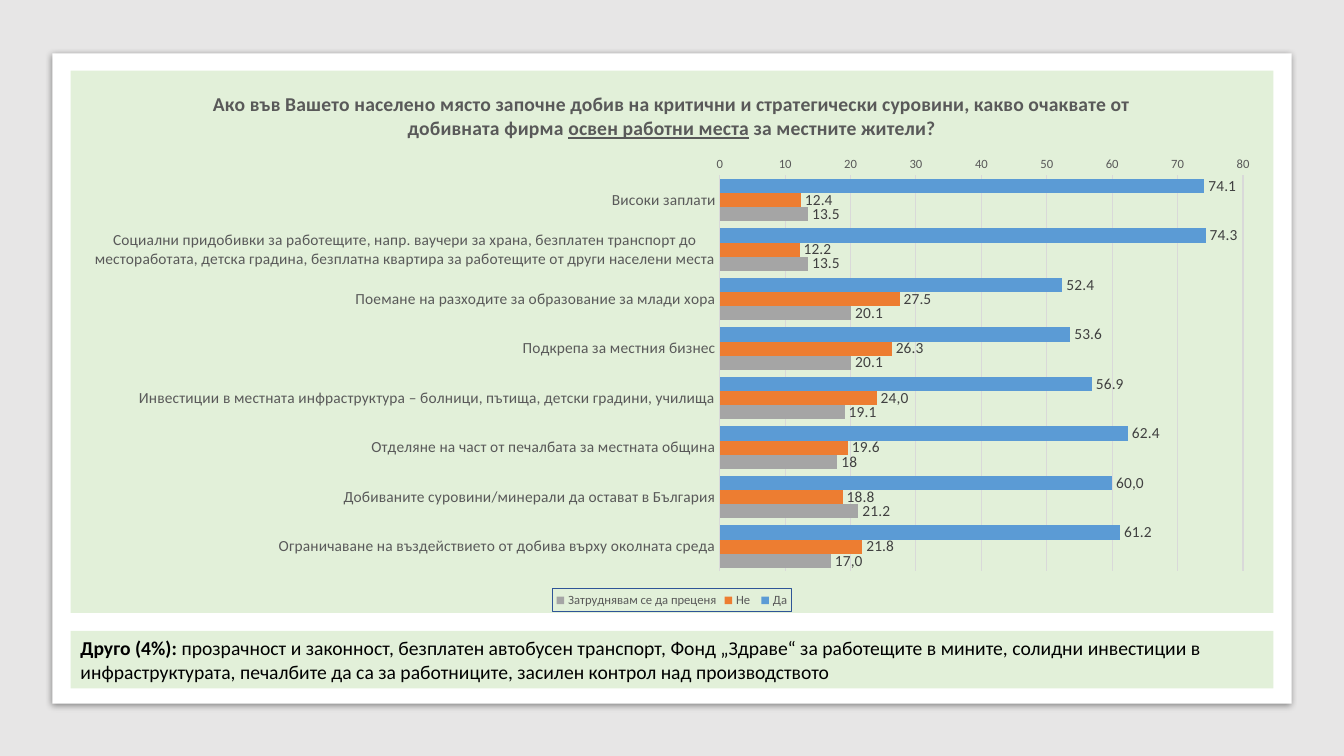
"""Build the survey slide on expectations from the mining company."""
from dataclasses import dataclass, field

from pptx import Presentation
from pptx.chart.chart import Chart
from pptx.chart.data import CategoryChartData
from pptx.dml.color import RGBColor
from pptx.enum.chart import XL_CHART_TYPE as ChartType, XL_LABEL_POSITION as LabelPosition
from pptx.enum.chart import XL_LEGEND_POSITION as LegendPosition, XL_TICK_MARK as TickMark
from pptx.enum.shapes import MSO_SHAPE as ShapeKind
from pptx.enum.text import MSO_ANCHOR as Anchor, PP_ALIGN as Align
from pptx.oxml import parse_xml
from pptx.oxml.ns import nsdecls, qn
from pptx.util import Inches, Pt

COLORS = {
    "backdrop": "E7E6E6", "panel": "FFFFFF", "green": "E2F0D9", "text": "000000",
    "muted": "595959", "label": "404040", "grid": "D9D9D9", "legend_border": "2F5597",
    "yes": "5B9BD5", "no": "ED7D31", "unsure": "A5A5A5",
}
FONT = "Calibri"
CATEGORIES = [
    "Високи заплати",
    "Социални придобивки за работещите, напр. ваучери за храна, безплатен транспорт до "
    "местоработата, детска градина, безплатна квартира за работещите от други населени места",
    "Поемане на разходите за образование за млади хора",
    "Подкрепа за местния бизнес",
    "Инвестиции в местната инфраструктура – болници, пътища, детски градини, училища",
    "Отделяне на част от печалбата за местната община",
    "Добиваните суровини/минерали да остават в България",
    "Ограничаване на въздействието от добива върху околната среда",
]


@dataclass
class Panel:
    """A filled rectangle, measured in inches."""
    left: float
    top: float
    width: float
    height: float
    color: str


@dataclass
class Answer:
    """One answer series and its specially worded labels."""
    name: str
    color: str
    values: list[float]
    labels: dict[int, str] = field(default_factory=dict)


@dataclass
class Piece:
    """A stretch of text with its own emphasis."""
    text: str
    bold: bool = False
    underline: bool = False


BACKDROP = Panel(0, 0, 13.33, 7.5, "backdrop")
CARD = Panel(0.52, 0.53, 12.29, 6.45, "panel")
CHART_AREA = Panel(0.7, 0.7, 11.93, 5.38, "green")
NOTE = Panel(0.7, 6.26, 11.93, 0.57, "green")
ANSWERS = [
    Answer("Да", "yes", [74.1, 74.3, 52.4, 53.6, 56.9, 62.4, 60, 61.2], {6: "60,0"}),
    Answer("Не ", "no", [12.4, 12.2, 27.5, 26.3, 24, 19.6, 18.8, 21.8], {4: "24,0"}),
    Answer("Затруднявам се да преценя", "unsure",
           [13.5, 13.5, 20.1, 20.1, 19.1, 18, 21.2, 17], {7: "17,0"}),
]
TITLE = [
    Piece("Ако във Вашето населено място започне добив на критични и стратегически суровини, "
          "какво очаквате от добивната фирма ", bold=True),
    Piece("освен работни места", bold=True, underline=True),
    Piece(" за местните жители?", bold=True),
]
NOTE_TEXT = [
    Piece("Друго (4%): ", bold=True),
    Piece("прозрачност и законност, безплатен автобусен транспорт, Фонд „Здраве“ за работещите "
          "в мините, солидни инвестиции в инфраструктурата, печалбите да са за работниците, "
          "засилен контрол над производството"),
]


def rgb(name: str) -> RGBColor:
    """Look up a palette colour."""
    return RGBColor.from_string(COLORS[name])


def style_font(font, size: float, color: str, bold: bool = False) -> None:
    """Apply the slide font with a size and colour."""
    font.name, font.size, font.bold = FONT, Pt(size), bold
    font.color.rgb = rgb(color)


def write_pieces(paragraph, pieces: list[Piece], color: str) -> None:
    """Write emphasised pieces into one paragraph."""
    for piece in pieces:
        run = paragraph.add_run()
        run.text = piece.text
        style_font(run.font, 14, color, piece.bold)
        if piece.underline:
            run.font.underline = True


def draw_panel(slide, panel: Panel):
    """Draw a borderless rectangle."""
    shape = slide.shapes.add_shape(
        ShapeKind.RECTANGLE, Inches(panel.left), Inches(panel.top),
        Inches(panel.width), Inches(panel.height))
    shape.shadow.inherit = False
    shape.fill.solid()
    shape.fill.fore_color.rgb = rgb(panel.color)
    shape.line.fill.background()
    return shape


def cast_shadow(shape) -> None:
    """Give a shape a soft shadow below."""
    effects = shape._element.spPr.find(qn("a:effectLst"))
    effects.append(parse_xml(
        f'<a:outerShdw {nsdecls("a")} blurRad="{Pt(5)}" dist="{Pt(1.4)}" dir="5400000" '
        'algn="t" rotWithShape="0"><a:srgbClr val="000000"><a:alpha val="43000"/>'
        '</a:srgbClr></a:outerShdw>'))


def place(element, index: int, **position: float) -> None:
    """Place a chart part, measured in inches from the chart's corner."""
    for old in element.findall(qn("c:layout")):
        element.remove(old)
    extent = {"x": CHART_AREA.width, "w": CHART_AREA.width,
              "y": CHART_AREA.height, "h": CHART_AREA.height}
    target = '<c:layoutTarget val="inner"/>' if "w" in position else ""
    modes = "".join(f'<c:{key}Mode val="edge"/>' for key in ("x", "y"))
    sizes = "".join(f'<c:{key} val="{value / extent[key]:.4f}"/>'
                    for key, value in position.items())
    element.insert(index, parse_xml(
        f'<c:layout {nsdecls("c")}><c:manualLayout>{target}{modes}{sizes}'
        '</c:manualLayout></c:layout>'))


def shape_properties(content: str):
    """Make chart shape properties."""
    return parse_xml(f'<c:spPr {nsdecls("c", "a")}>{content}</c:spPr>')


def solid(name: str) -> str:
    """Make a solid fill."""
    return f'<a:solidFill><a:srgbClr val="{COLORS[name]}"/></a:solidFill>'


def style_axes(chart: Chart) -> None:
    """Format both axes and the grid."""
    for axis, size in ((chart.category_axis, 11), (chart.value_axis, 9)):
        axis.major_tick_mark = axis.minor_tick_mark = TickMark.NONE
        style_font(axis.tick_labels.font, size, "muted")
    values = chart.value_axis
    values.minimum_scale, values.maximum_scale, values.major_unit = 0, 80, 10
    values.format.line.fill.background()
    chart.category_axis.reverse_order = True
    for line in (chart.category_axis.format.line, values.major_gridlines.format.line):
        line.color.rgb, line.width = rgb("grid"), Pt(0.75)


def style_answer(series, answer: Answer) -> None:
    """Colour a series and label its bars."""
    series.format.fill.solid()
    series.format.fill.fore_color.rgb = rgb(answer.color)
    labels = series.data_labels
    labels.show_value, labels.position = True, LabelPosition.OUTSIDE_END
    style_font(labels.font, 11, "label")
    for index, text in answer.labels.items():
        label = series.points[index].data_label
        label.text_frame.text = text
        style_font(label.text_frame.paragraphs[0].runs[0].font, 11, "label")
        label.position = LabelPosition.OUTSIDE_END


def draw_chart(slide, area: Panel) -> None:
    """Draw the bar chart with title and legend."""
    data = CategoryChartData()
    data.categories = CATEGORIES
    for answer in ANSWERS:
        data.add_series(answer.name, answer.values)
    chart = slide.shapes.add_chart(
        ChartType.BAR_CLUSTERED, Inches(area.left), Inches(area.top),
        Inches(area.width), Inches(area.height), data).chart
    style_font(chart.font, 10, "text")
    space = chart._chartSpace
    space.chart.addnext(shape_properties(solid(area.color) + "<a:ln><a:noFill/></a:ln>"))
    plot = chart.plots[0]
    plot.gap_width, plot.vary_by_categories = 50, False
    for series, answer in zip(plot.series, ANSWERS):
        style_answer(series, answer)
    style_axes(chart)
    write_pieces(chart.chart_title.text_frame.paragraphs[0], TITLE, "muted")
    chart.has_legend = True
    legend = chart.legend
    legend.position, legend.include_in_layout = LegendPosition.BOTTOM, False
    style_font(legend.font, 9, "muted")
    border = f'<a:noFill/><a:ln w="{Pt(0.75)}">{solid("legend_border")}</a:ln>'
    legend._element.find(qn("c:overlay")).addnext(shape_properties(border))
    place(legend._element, 1, x=4.78, y=5.18)
    place(chart.chart_title._element, 1, x=1.38, y=0.17)
    place(space.chart.plotArea, 0, x=6.44, y=1.04, w=5.19, h=3.93)


def main() -> None:
    """Build and save the slide."""
    presentation = Presentation()
    presentation.slide_width, presentation.slide_height = Inches(13.33), Inches(7.5)
    slide = presentation.slides.add_slide(presentation.slide_layouts[6])
    draw_panel(slide, BACKDROP)
    cast_shadow(draw_panel(slide, CARD))
    draw_chart(slide, CHART_AREA)
    frame = draw_panel(slide, NOTE).text_frame
    frame.word_wrap, frame.vertical_anchor = True, Anchor.MIDDLE
    frame.paragraphs[0].alignment = Align.LEFT
    write_pieces(frame.paragraphs[0], NOTE_TEXT, "text")
    presentation.save("out.pptx")


if __name__ == "__main__":
    main()
